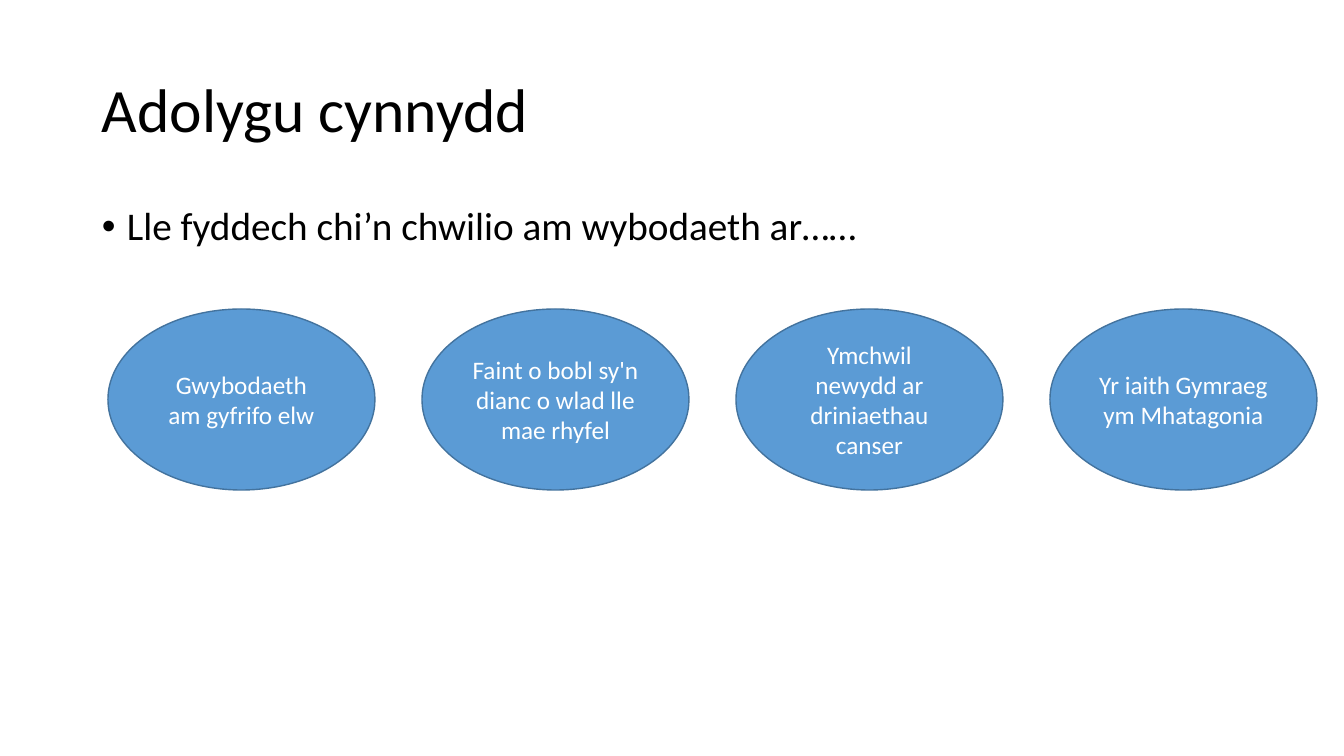
import lxml.etree
import pptx
import pptx.dml.color
import pptx.enum.shapes
import pptx.enum.text
import pptx.oxml.ns
import pptx.util

PX = 914400 / 100.8
FONT = "Calibri"
COLOURS = {"ink": "000000", "oval": "5B9BD5", "outline": "43739E", "label": "FFFFFF"}

TOPICS = [
    "Gwybodaeth am gyfrifo elw",
    "Faint o bobl sy'n dianc o wlad lle mae rhyfel",
    "Ymchwil newydd ar driniaethau canser",
    "Yr iaith Gymraeg ym Mhatagonia",
]
OVAL_LEFT, OVAL_TOP, OVAL_WIDTH, OVAL_HEIGHT = 108, 309, 267, 181
OVAL_PITCH = 314
BULLET_INDENT = 25


def px(length):
    return pptx.util.Emu(round(length * PX))


def colour(name):
    return pptx.dml.color.RGBColor.from_string(COLOURS[name])


def write(shape, text, size, ink, anchor):
    """Fill the shape with one wrapped paragraph and return that paragraph."""
    frame = shape.text_frame
    frame.word_wrap = True
    frame.vertical_anchor = anchor
    paragraph = frame.paragraphs[0]
    paragraph.text = text
    paragraph.font.name = FONT
    paragraph.font.size = pptx.util.Pt(size)
    paragraph.font.color.rgb = colour(ink)
    return paragraph


def add_text(slide, text, left, top, width, height, size, anchor):
    box = slide.shapes.add_textbox(px(left), px(top), px(width), px(height))
    paragraph = write(box, text, size, "ink", anchor)
    paragraph.line_spacing = 0.9
    return paragraph


def add_bullet(paragraph):
    properties = paragraph._p.get_or_add_pPr()
    properties.set("marL", str(px(BULLET_INDENT)))
    properties.set("indent", str(-px(BULLET_INDENT)))
    for tag, key, value in (("a:buFont", "typeface", "Arial"), ("a:buChar", "char", "•")):
        mark = lxml.etree.SubElement(properties, pptx.oxml.ns.qn(tag))
        mark.set(key, value)


def add_topic(slide, text, left):
    oval = slide.shapes.add_shape(
        pptx.enum.shapes.MSO_SHAPE.OVAL,
        px(left), px(OVAL_TOP), px(OVAL_WIDTH), px(OVAL_HEIGHT),
    )
    oval.shadow.inherit = False
    oval.fill.solid()
    oval.fill.fore_color.rgb = colour("oval")
    oval.line.color.rgb = colour("outline")
    oval.line.width = pptx.util.Pt(1)
    label = write(oval, text, 18, "label", pptx.enum.text.MSO_ANCHOR.MIDDLE)
    label.alignment = pptx.enum.text.PP_ALIGN.CENTER


def main():
    deck = pptx.Presentation()
    deck.slide_width, deck.slide_height = px(1344), px(756)
    slide = deck.slides.add_slide(deck.slide_layouts[6])

    add_text(slide, "Adolygu cynnydd", 92, 40, 1159, 146, 44,
             pptx.enum.text.MSO_ANCHOR.MIDDLE)
    question = add_text(slide, "Lle fyddech chi’n chwilio am wybodaeth ar……",
                        92, 202, 1159, 65, 28, pptx.enum.text.MSO_ANCHOR.TOP)
    question.space_before = pptx.util.Pt(10)
    add_bullet(question)

    for column, topic in enumerate(TOPICS):
        add_topic(slide, topic, OVAL_LEFT + column * OVAL_PITCH)

    deck.save("out.pptx")


if __name__ == "__main__":
    main()
